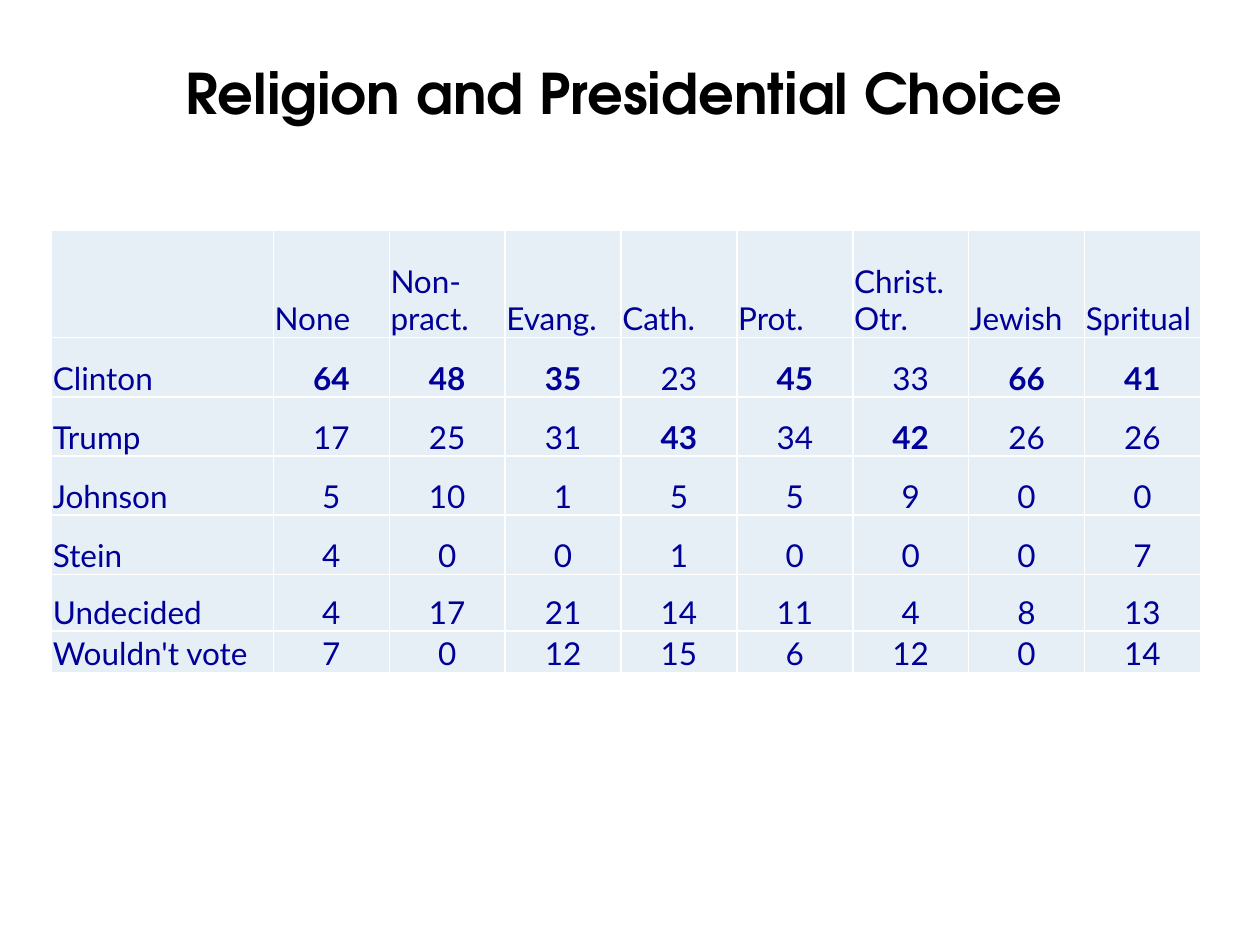
from lxml.etree import SubElement
from pptx import Presentation
from pptx.dml.color import RGBColor
from pptx.enum.text import MSO_ANCHOR, PP_ALIGN
from pptx.oxml.ns import qn
from pptx.util import Inches, Pt

BLACK = RGBColor(0x00, 0x00, 0x00)
NAVY = RGBColor(0x00, 0x00, 0x99)
PALE = RGBColor(0xE7, 0xEF, 0xF6)
WHITE = RGBColor(0xFF, 0xFF, 0xFF)

WIDE, HIGH = Inches(10), Inches(7.5)
COLS = [1.76] + [0.92] * 8
ROWS = [0.85] + [0.47] * 4 + [0.45, 0.33]

FAITHS = ["None", "Non-pract.", "Evang.", "Cath.", "Prot.",
          "Christ. Otr.", "Jewish", "Spritual"]
VOTES = {
    "Clinton": [64, 48, 35, 23, 45, 33, 66, 41],
    "Trump": [17, 25, 31, 43, 34, 42, 26, 26],
    "Johnson": [5, 10, 1, 5, 5, 9, 0, 0],
    "Stein": [4, 0, 0, 1, 0, 0, 0, 7],
    "Undecided": [4, 17, 21, 14, 11, 4, 8, 13],
    "Wouldn't vote": [7, 0, 12, 15, 6, 12, 0, 14],
}


def add_run(para, text, face, size, color, bold=False):
    run = para.add_run()
    run.text = text
    font = run.font
    font.name, font.size, font.bold = face, Pt(size), bold
    font.color.rgb = color


def add_title(slide, text):
    box = slide.shapes.add_textbox(
        int(WIDE * 0.058), int(HIGH * 0.056), int(WIDE * 0.875), int(HIGH * 0.077))
    frame = box.text_frame
    frame.word_wrap = True
    frame.vertical_anchor = MSO_ANCHOR.BOTTOM
    frame.margin_top = frame.margin_bottom = 0
    para = frame.paragraphs[0]
    para.alignment = PP_ALIGN.CENTER
    add_run(para, text, "TeX Gyre Adventor", 32, BLACK, True)


def add_edges(cell):
    """Draw a thin white line on all four sides of the cell."""
    props = cell._tc.get_or_add_tcPr()
    for side in ("a:lnL", "a:lnR", "a:lnT", "a:lnB"):
        line = SubElement(props, qn(side), w=str(Pt(1)))
        fill = SubElement(line, qn("a:solidFill"))
        SubElement(fill, qn("a:srgbClr"), val=str(WHITE))


def fill_cell(cell, text, align, bold):
    add_edges(cell)
    cell.fill.solid()
    cell.fill.fore_color.rgb = PALE
    cell.vertical_anchor = MSO_ANCHOR.BOTTOM
    cell.margin_left = cell.margin_right = cell.margin_top = Inches(0.01)
    cell.margin_bottom = 0
    if text:
        para = cell.text_frame.paragraphs[0]
        para.alignment = align
        add_run(para, text, "Lato", 18, NAVY, bold)


def add_votes(slide):
    """Add the table, with the leading share of each column in bold."""
    table = slide.shapes.add_table(
        len(ROWS), len(COLS), int(WIDE * 0.041), int(HIGH * 0.244),
        Inches(sum(COLS)), Inches(sum(ROWS))).table
    table.first_row = table.horz_banding = False
    for col, width in zip(table.columns, COLS):
        col.width = Inches(width)
    for row, height in zip(table.rows, ROWS):
        row.height = Inches(height)

    tops = [max(col) for col in zip(*VOTES.values())]
    grid = [["", *FAITHS]] + [[name, *vals] for name, vals in VOTES.items()]
    for r, line in enumerate(grid):
        for c, value in enumerate(line):
            share = r > 0 and c > 0
            align = PP_ALIGN.CENTER if share else PP_ALIGN.LEFT
            bold = share and value == tops[c - 1]
            fill_cell(table.cell(r, c), str(value), align, bold)


def main():
    deck = Presentation()
    deck.slide_width, deck.slide_height = WIDE, HIGH
    slide = deck.slides.add_slide(deck.slide_layouts[6])
    add_title(slide, "Religion and Presidential Choice")
    add_votes(slide)
    deck.save("out.pptx")


if __name__ == "__main__":
    main()
